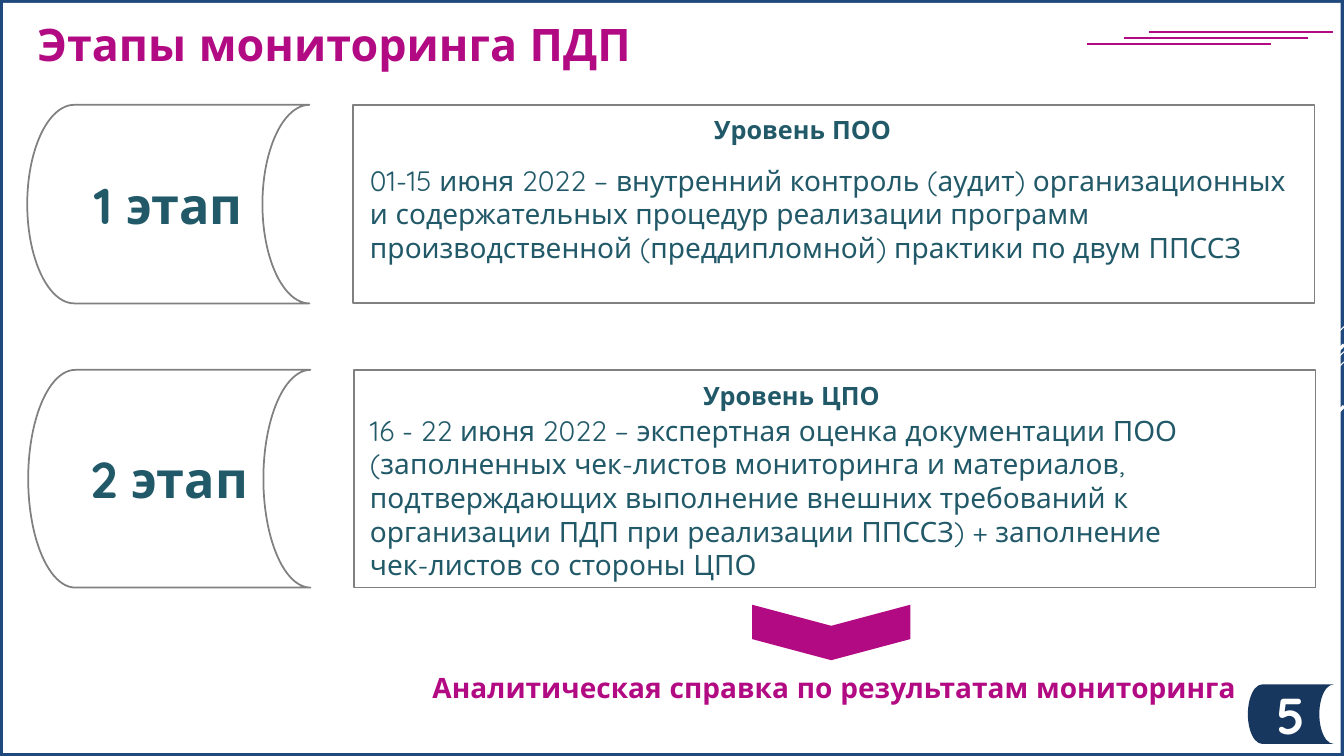
from dataclasses import dataclass

from lxml import etree
from pptx import Presentation
from pptx import util as u
from pptx.dml.color import RGBColor
from pptx.enum import shapes, text
from pptx.oxml import ns


@dataclass(frozen=True)
class Theme:
    font: str = "Quicksand"
    accent: str = "B20A82"
    ink: str = "215968"
    frame: str = "1F497D"
    badge: str = "17375E"
    outline: str = "808080"
    white: str = "FFFFFF"
    title_size: int = 32
    label_size: int = 36
    heading_size: int = 18
    note_size: int = 20


@dataclass(frozen=True)
class Area:
    """A place on a grid of 100 columns by 100 rows."""
    column: float
    row: float
    columns: float
    rows: float


@dataclass(frozen=True)
class Stage:
    label: str
    heading: str
    notes: tuple[str, ...]
    tab_area: Area
    box_area: Area
    heading_area: Area
    note_area: Area


@dataclass(frozen=True)
class Stroke:
    column: float
    row: float
    end_column: float
    end_row: float
    color: str
    width: float


THEME = Theme()
WIDTH, HEIGHT = u.Inches(13.33), u.Inches(7.5)
TAB = shapes.MSO_SHAPE.FLOWCHART_STORED_DATA
RECTANGLE = shapes.MSO_SHAPE.RECTANGLE
CENTER, LEFT = text.PP_ALIGN.CENTER, text.PP_ALIGN.LEFT

STAGES = (
    Stage(
        "1 этап", "Уровень ПОО",
        ("01-15 июня 2022 – внутренний контроль (аудит) организационных и содержательных "
         "процедур реализации программ производственной (преддипломной) практики по двум ППССЗ",),
        Area(2.03, 13.87, 21, 26.27), Area(26.25, 13.87, 71.55, 26.27),
        Area(31.2, 14.4, 57, 5.33), Area(26.78, 20.93, 70.5, 14.8),
    ),
    Stage(
        "2 этап", "Уровень ЦПО",
        ("16 - 22 июня 2022 – экспертная оценка документации ПОО (заполненных чек-листов "
         "мониторинга и материалов, подтверждающих выполнение внешних требований к "
         "организации ПДП при реализации ППССЗ) + заполнение",
         "чек-листов со стороны ЦПО"),
        Area(2.1, 48.93, 21, 28.8), Area(26.33, 48.93, 71.55, 28.8),
        Area(30.38, 49.6, 57, 5.33), Area(26.78, 54, 70.95, 23.73),
    ),
)

# Rays leave the right edge at 45 degrees: row, run in columns, width
RAYS = tuple(
    Stroke(100, row, 100 - run, row + run * WIDTH / HEIGHT, THEME.white, width)
    for row, run, width in ((43.2, 7.5, 0.75), (46.53, 24.45, 0.75), (47.87, 15.53, 0.75),
                            (45.6, 14.33, 2.25), (53.73, 10.43, 2.25))
)
ACCENTS = tuple(
    Stroke(column, row, column + 13.7, row, THEME.accent, 1.5)
    for column, row in ((85.5, 4.27), (83.63, 5.07), (80.85, 5.87))
)


def across(columns: float) -> int:
    return round(WIDTH * columns / 100)


def down(rows: float) -> int:
    return round(HEIGHT * rows / 100)


def bounds(area: Area) -> tuple[int, int, int, int]:
    return across(area.column), down(area.row), across(area.columns), down(area.rows)


def draw_stroke(page, stroke: Stroke) -> None:
    line = page.shapes.add_connector(
        shapes.MSO_CONNECTOR.STRAIGHT, across(stroke.column), down(stroke.row),
        across(stroke.end_column), down(stroke.end_row))
    line.line.color.rgb = RGBColor.from_string(stroke.color)
    line.line.width = u.Pt(stroke.width)
    etree.SubElement(line.element.spPr, ns.qn("a:effectLst"))


def draw_shape(page, kind, area: Area, fill: str = "", outline: str = ""):
    shape = page.shapes.add_shape(kind, *bounds(area))
    shape.shadow.inherit = False
    if fill:
        shape.fill.solid()
        shape.fill.fore_color.rgb = RGBColor.from_string(fill)
    else:
        shape.fill.background()
    if outline:
        shape.line.color.rgb = RGBColor.from_string(outline)
        shape.line.width = u.Pt(1.25)
    else:
        shape.line.fill.background()
    return shape


def write(shape, *lines: str, size: int, color: str = THEME.ink, bold: bool = True,
          align=CENTER, anchor=text.MSO_ANCHOR.TOP) -> None:
    frame = shape.text_frame
    frame.word_wrap = True
    frame.auto_size = text.MSO_AUTO_SIZE.NONE
    frame.vertical_anchor = anchor
    for index, line in enumerate(lines):
        para = frame.add_paragraph() if index else frame.paragraphs[0]
        para.alignment = align
        para.space_before = u.Pt(0)
        span = para.add_run()
        span.text = line
        span.font.name = THEME.font
        span.font.size = u.Pt(size)
        span.font.bold = bold
        span.font.color.rgb = RGBColor.from_string(color)


def place(placeholder, area: Area) -> None:
    """Move a placeholder to its area and in front of what is drawn so far."""
    placeholder.left, placeholder.top, placeholder.width, placeholder.height = bounds(area)
    placeholder.element.getparent().append(placeholder.element)


def remove_bullets(shape) -> None:
    for para in shape.text_frame.paragraphs:
        properties = para._p.get_or_add_pPr()
        properties.set("marL", "0")
        properties.set("indent", "0")
        etree.SubElement(properties, ns.qn("a:buNone"))


def draw_text(page, area: Area, line: str, size: int, color: str = THEME.ink) -> None:
    write(page.shapes.add_textbox(*bounds(area)), line, size=size, color=color)


def draw_stage(page, stage: Stage, body) -> None:
    tab = draw_shape(page, TAB, stage.tab_area, outline=THEME.outline)
    write(tab, stage.label, size=THEME.label_size, anchor=text.MSO_ANCHOR.MIDDLE)
    draw_shape(page, RECTANGLE, stage.box_area, outline=THEME.outline)
    place(body, stage.note_area)
    write(body, *stage.notes, size=THEME.note_size, bold=False, align=LEFT)
    remove_bullets(body)
    draw_text(page, stage.heading_area, stage.heading, THEME.heading_size)


def main() -> None:
    deck = Presentation()
    deck.slide_width, deck.slide_height = WIDTH, HEIGHT
    page = deck.slides.add_slide(deck.slide_layouts.get_by_name("Two Content"))
    page.background.fill.solid()
    page.background.fill.fore_color.rgb = RGBColor.from_string(THEME.frame)
    title, *bodies = page.placeholders

    for ray in RAYS:
        draw_stroke(page, ray)
    draw_shape(page, RECTANGLE, Area(0.23, 0.4, 99.53, 99.2), fill=THEME.white)
    for accent in ACCENTS:
        draw_stroke(page, accent)

    place(title, Area(2.03, 1.6, 83.4, 8.53))
    write(title, "Этапы мониторинга ПДП", size=THEME.title_size, color=THEME.accent, align=LEFT)
    badge = draw_shape(page, TAB, Area(92.85, 90.53, 6.38, 7.87), fill=THEME.badge)
    write(badge, "5", size=THEME.label_size, color=THEME.white, anchor=text.MSO_ANCHOR.MIDDLE)

    for stage, body in zip(STAGES, bodies):
        draw_stage(page, stage, body)

    arrow = draw_shape(page, shapes.MSO_SHAPE.CHEVRON, Area(59.78, 73.2, 4.13, 20.93),
                       fill=THEME.accent)
    arrow.rotation = 90
    arrow.adjustments[0] = 0.38
    draw_text(page, Area(26.33, 88, 71.48, 5.87),
              "Аналитическая справка по результатам мониторинга", THEME.note_size, THEME.accent)
    deck.save("out.pptx")


if __name__ == "__main__":
    main()
